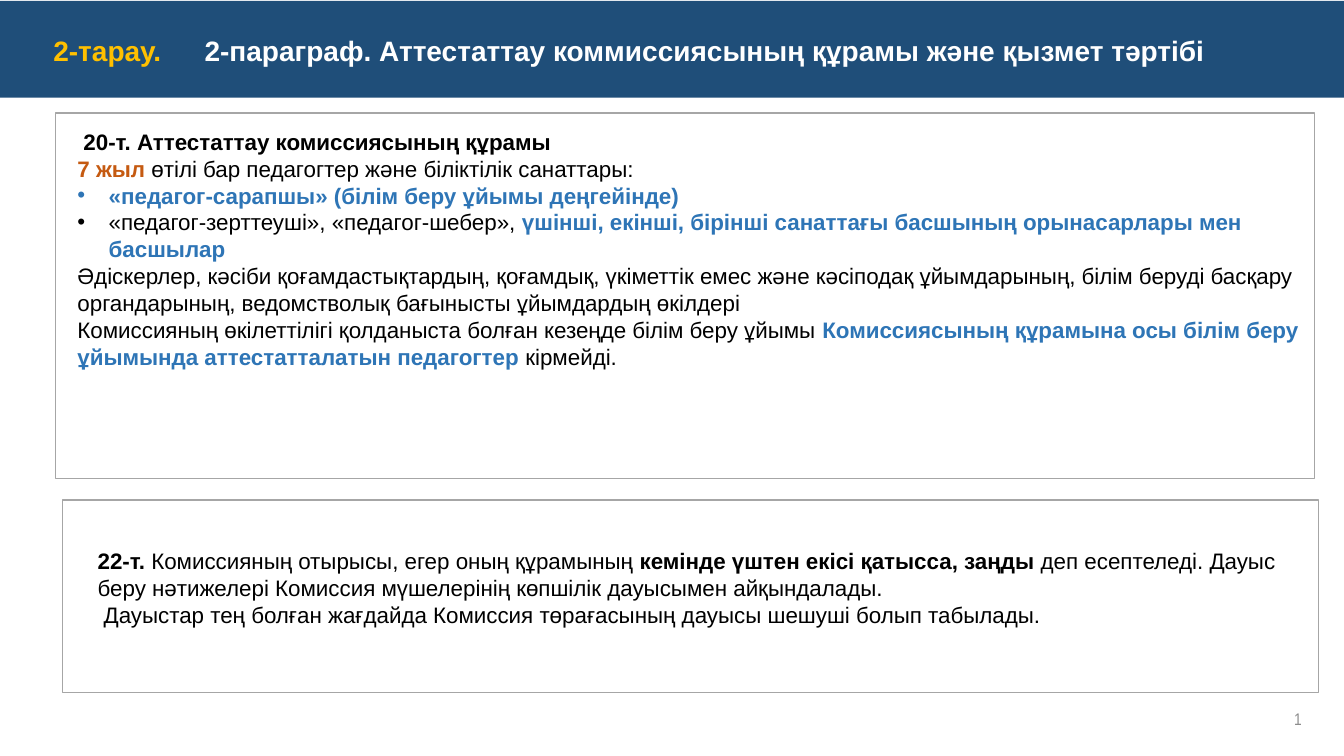
from dataclasses import dataclass

from lxml.etree import SubElement
from pptx import Presentation
from pptx.dml.color import RGBColor as Rgb
from pptx.enum.shapes import MSO_SHAPE as Shape
from pptx.enum.text import MSO_ANCHOR as Anchor, PP_ALIGN as Align
from pptx.oxml.ns import qn
from pptx.util import Inches, Pt


@dataclass(frozen=True)
class Theme:
    font: str = "Arial"
    number_font: str = "Arial Narrow"
    title_size: int = 20
    body_size: int = 16
    number_size: int = 12
    banner: str = "1F4E79"
    white: str = "FFFFFF"
    frame: str = "A6A6A6"
    black: str = "000000"
    gold: str = "FFC000"
    orange: str = "C55A11"
    blue: str = "2E75B6"
    gray: str = "8C8C8C"


class SlideBuilder:
    def __init__(self, page, theme):
        self.page = page
        self.theme = theme

    def panel(self, place, fill, line=None):
        box = self.page.shapes.add_shape(Shape.RECTANGLE, *map(Inches, place))
        box.shadow.inherit = False
        box.fill.solid()
        box.fill.fore_color.rgb = Rgb.from_string(fill)
        if line:
            box.line.color.rgb = Rgb.from_string(line)
            box.line.width = Pt(1)
        else:
            box.line.fill.background()

    def text(self, place, paragraphs, size, font=None, align=Align.LEFT, anchor=Anchor.TOP):
        frame = self.page.shapes.add_textbox(*map(Inches, place)).text_frame
        frame.word_wrap = True
        frame.vertical_anchor = anchor
        for index, (spans, layout) in enumerate(paragraphs):
            para = frame.paragraphs[0] if index == 0 else frame.add_paragraph()
            para.alignment = align
            self.layout(para, **layout)
            for words, color, bold in spans:
                span = para.add_run()
                span.text = words
                span.font.name = font or self.theme.font
                span.font.size = Pt(size)
                span.font.bold = bold
                span.font.color.rgb = Rgb.from_string(color)

    def layout(self, para, left=0, first=0, bullet=None, tab=None):
        properties = para._p.get_or_add_pPr()
        properties.set("marL", str(Inches(left)))
        properties.set("indent", str(Inches(first)))
        if bullet:
            SubElement(properties, qn("a:buFont"), typeface=self.theme.font)
            SubElement(properties, qn("a:buChar"), char=bullet)
        if tab:
            stops = SubElement(properties, qn("a:tabLst"))
            SubElement(stops, qn("a:tab"), pos=str(Inches(tab)), algn="l")


def main():
    deck = Presentation()
    deck.slide_width, deck.slide_height = Inches(13.33), Inches(7.5)
    theme = Theme()
    builder = SlideBuilder(deck.slides.add_slide(deck.slide_layouts[6]), theme)
    black, blue = theme.black, theme.blue
    bulleted = {"left": 0.31, "first": -0.31, "bullet": "•"}
    nudged = {"first": 0.06}

    title = [
        ([("2-тарау.\t", theme.gold, True),
          ("2-параграф. Аттестаттау коммиссиясының құрамы және қызмет тәртібі", theme.white, True)],
         {"tab": 1.23}),
    ]
    membership = [
        ([("20-т. Аттестаттау комиссиясының құрамы", black, True)], nudged),
        ([("7 жыл ", theme.orange, True),
          ("өтілі бар педагогтер және біліктілік санаттары:", black, False)], {}),
        ([("«педагог-сарапшы» (білім беру ұйымы деңгейінде)", blue, True)], bulleted),
        ([("«педагог-зерттеуші», «педагог-шебер», ", black, False),
          ("үшінші, екінші, бірінші санаттағы басшының орынасарлары мен басшылар", blue, True)],
         bulleted),
        ([("Әдіскерлер, кәсіби қоғамдастықтардың, қоғамдық, үкіметтік емес және кәсіподақ "
           "ұйымдарының, білім беруді басқару органдарының, ведомстволық бағынысты "
           "ұйымдардың өкілдері", black, False)], {}),
        ([("Комиссияның өкілеттілігі қолданыста болған кезеңде білім беру ұйымы ", black, False),
          ("Комиссиясының құрамына осы білім беру ұйымында аттестатталатын педагогтер ", blue, True),
          ("кірмейді.", black, False)], {}),
    ]
    voting = [
        ([("22-т. ", black, True),
          ("Комиссияның отырысы, егер оның құрамының ", black, False),
          ("кемінде үштен екісі қатысса, заңды ", black, True),
          ("деп есептеледі. Дауыс беру нәтижелері Комиссия мүшелерінің көпшілік дауысымен "
           "айқындалады.", black, False)], {}),
        ([("Дауыстар тең болған жағдайда Комиссия төрағасының дауысы шешуші болып табылады.",
           black, False)], nudged),
    ]

    builder.panel((0.62, 4.96, 12.46, 1.91), theme.white, theme.frame)
    builder.panel((0.55, 1.12, 12.49, 3.63), theme.white, theme.frame)
    builder.text((10.01, 6.93, 3, 0.4), [([("1", theme.gray, False)], {})],
                 theme.number_size, theme.number_font, Align.RIGHT, Anchor.MIDDLE)
    builder.panel((0, 0.01, 13.33, 0.96), theme.banner)
    builder.text((0.87, 5.38, 12.07, 0.91), voting, theme.body_size)
    builder.text((0.67, 1.22, 12.34, 2.52), membership, theme.body_size)
    builder.text((0.43, 0.28, 12.51, 0.44), title, theme.title_size)
    deck.save("out.pptx")


if __name__ == "__main__":
    main()
